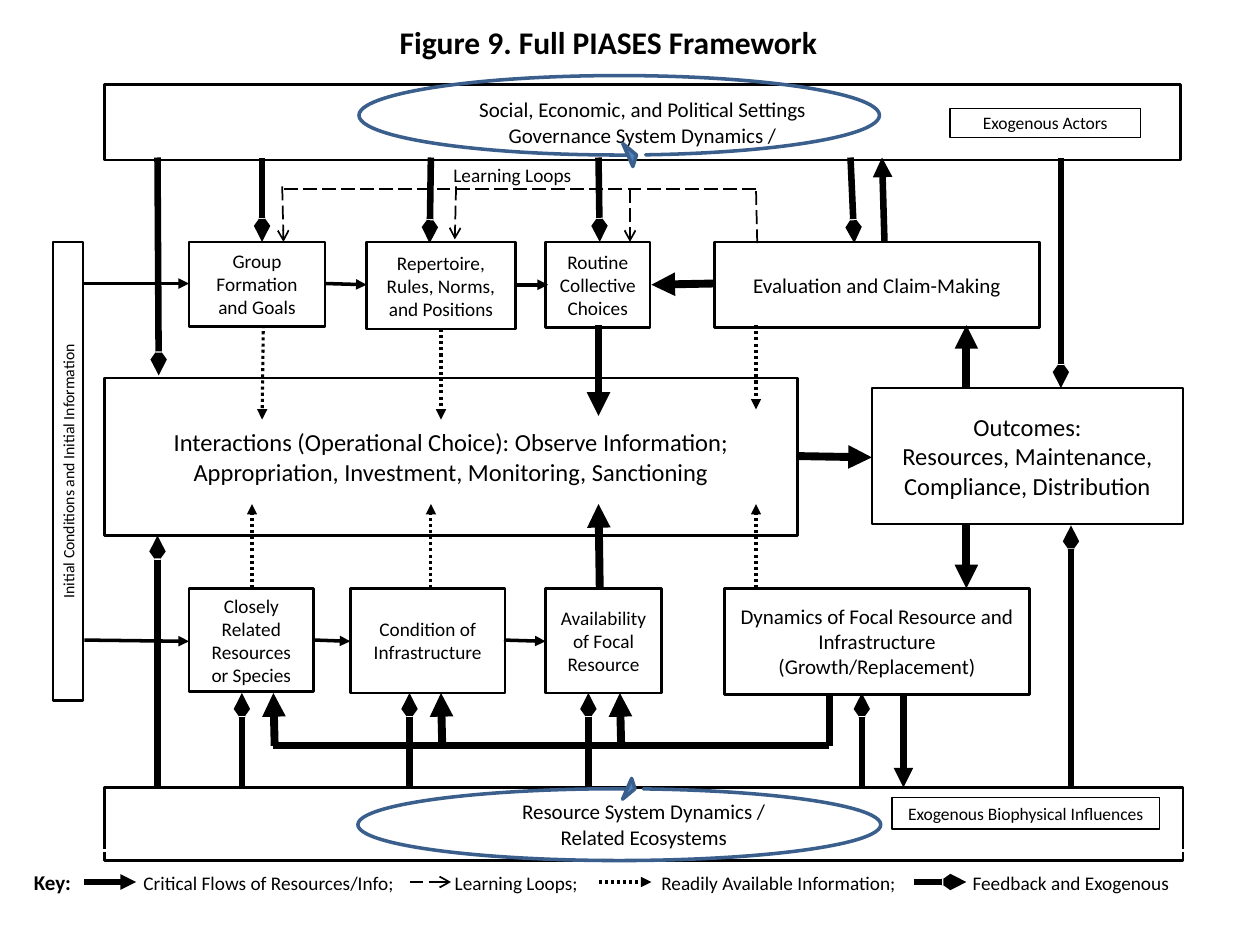
import dataclasses
import typing

import lxml.etree
import pptx
import pptx.dml.color
import pptx.enum.dml
import pptx.enum.shapes
import pptx.enum.text
import pptx.oxml.ns
import pptx.util

Inches = pptx.util.Inches
Pt = pptx.util.Pt
qn = pptx.oxml.ns.qn
ALIGN = pptx.enum.text.PP_ALIGN
DASH = pptx.enum.dml.MSO_LINE
SHAPE = pptx.enum.shapes.MSO_SHAPE


@dataclasses.dataclass(frozen=True)
class Theme:
    ink: str = "000000"
    paper: str = "FFFFFF"
    loop: str = "4F81BD"
    rim: str = "3A5F8C"
    font: str = "Calibri"
    title: float = 18
    large: float = 14
    text: float = 12
    small: float = 11
    tag: float = 10
    side: float = 9


THEME = Theme()


@dataclasses.dataclass(frozen=True)
class Box:
    text: str
    left: float
    top: float
    width: float
    height: float
    size: float = THEME.small
    edge: float = 1.5
    color: str = THEME.ink
    align: ALIGN = ALIGN.CENTER


@dataclasses.dataclass(frozen=True)
class Flow:
    """A kind of line: its weight, dash and arrowhead."""
    weight: float
    dash: typing.Optional[DASH] = None
    head: str = ""
    breadth: str = "med"


BOLD = Flow(4.5, head="triangle")
STEP = Flow(2, head="triangle")
REPLY = Flow(3.75, head="triangle")
OUTER = Flow(3.75, head="arrow", breadth="sm")
TRUNK = Flow(4)
LOOP = Flow(1, DASH.LONG_DASH)
LEARN = Flow(1, DASH.LONG_DASH, "arrow")
INFO = Flow(1.75, DASH.ROUND_DOT, "triangle")
KEY = Flow(3, head="triangle")

BOXES = [
    # Settings above and below
    Box("Social, Economic, and Political Settings\nGovernance System Dynamics /",
        0.83, 0.67, 8.54, 0.6, THEME.text),
    Box("Resource System Dynamics /\nRelated Ecosystems",
        0.83, 6.25, 8.56, 0.58, THEME.text),
    # Choice row
    Box("Evaluation and Claim-Making", 5.67, 1.92, 2.58, 0.68, THEME.text),
    Box("Routine Collective Choices", 4.33, 1.92, 0.83, 0.68),
    Box("Repertoire, Rules, Norms, and Positions", 2.91, 1.92, 1.18, 0.69),
    Box("Group Formation and Goals", 1.5, 1.92, 1.08, 0.67),
    # Resource row
    Box("Closely Related Resources or Species", 1.5, 4.67, 0.99, 0.82),
    Box("Condition of Infrastructure", 2.78, 4.67, 1.23, 0.83),
    Box("Availability of Focal Resource", 4.33, 4.67, 0.92, 0.83),
    Box("Dynamics of Focal Resource and Infrastructure (Growth/Replacement)",
        5.75, 4.67, 2.42, 0.84, THEME.text),
    # Centre
    Box("Outcomes:\nResources, Maintenance, Compliance, Distribution",
        6.92, 3.08, 2.47, 1.08, THEME.large),
    Box("Interactions (Operational Choice): Observe Information;\n"
        "Appropriation, Investment, Monitoring, Sanctioning",
        0.83, 3, 5.5, 1.25, THEME.large),
    # Outside influences
    Box("Exogenous Actors", 7.54, 0.86, 1.51, 0.23, THEME.tag, 0),
    Box("Exogenous Biophysical Influences", 7.08, 6.33, 2.12, 0.25, THEME.tag, 0),
]
SIDE = Box("Initial Conditions and Initial Information",
           0.42, 1.92, 0.24, 3.64, THEME.side)
LEGEND = Box("", 0.17, 6.75, 9.25, 0.5, color=THEME.paper, align=ALIGN.LEFT)
LABELS = {1.14: "Critical Flows of Resources/Info;", 3.61: "Learning Loops;",
          5.25: "Readily Available Information;", 7.72: "Feedback and Exogenous"}

# Each line runs from x, y to x, y
LINES = {
    BOLD: [(6.33, 3.62, 6.92, 3.63), (7.67, 3.08, 7.67, 2.58),
           (7.67, 4.17, 7.67, 4.67), (5.67, 2.25, 5.17, 2.26),
           (4.75, 2.58, 4.75, 3.3), (4.76, 4.67, 4.75, 4)]
          + [(x + 0.01, 5.92, x, 5.5) for x in (2.17, 3.5, 4.92)],
    STEP: [(2.58, 2.25, 2.91, 2.26), (4.08, 2.26, 4.35, 2.26),
           (4, 5.08, 4.33, 5.09), (2.5, 5.08, 2.78, 5.09),
           (0.67, 2.25, 1.5, 2.25), (0.67, 5.08, 1.5, 5.09)],
    LOOP: [(6.01, 1.93, 6, 1.5), (6, 1.5, 2.25, 1.5)],
    LEARN: [(2.24, 1.48, 2.25, 1.92), (3.62, 1.48, 3.61, 1.9),
            (5, 1.5, 5, 1.92), (3.25, 7, 3.58, 7)],
    OUTER: [(x, 1.25, end, y) for x, end, y in
            ((1.25, 1.26, 2.98), (2.08, 2.08, 1.92), (3.42, 3.41, 1.93),
             (4.75, 4.76, 1.92), (6.75, 6.78, 1.93), (8.42, 8.42, 3.08))]
           + [(x, 6.25, x, y) for x, y in
              ((1.92, 5.5), (3.25, 5.5), (4.67, 5.5), (6.84, 5.5),
               (1.25, 4.25), (8.5, 4.17))]
           + [(7.25, 7, 7.67, 7)],
    REPLY: [(7.02, 1.92, 7, 1.25), (7.17, 5.5, 7.17, 6.25)],
    TRUNK: [(6.58, 5.92, 2.17, 5.92), (6.58, 5.92, 6.58, 5.5)],
    INFO: [(x, 4.67, x, 4) for x in (2, 3.42, 6)]
          + [(2.09, 2.58, 2.08, 3.33), (3.5, 2.61, 3.5, 3.33),
             (6, 2.58, 6, 3.25), (4.75, 7, 5.17, 7)],
    KEY: [(0.67, 7, 1.08, 7)],
}


def tint(code: str) -> pptx.dml.color.RGBColor:
    return pptx.dml.color.RGBColor.from_string(code)


def style(para, size: float, align: ALIGN, bold: bool = False) -> None:
    para.alignment = align
    font = para.font
    font.name, font.size, font.bold = THEME.font, Pt(size), bold
    font.color.rgb = tint(THEME.ink)


def draw_box(slide, box: Box):
    shape = slide.shapes.add_shape(
        SHAPE.RECTANGLE, *map(Inches, (box.left, box.top, box.width, box.height)))
    shape.shadow.inherit = False
    shape.fill.background()
    shape.line.color.rgb = tint(box.color)
    shape.line.width = Pt(box.edge)
    frame = shape.text_frame
    frame.word_wrap = True
    frame.vertical_anchor = pptx.enum.text.MSO_ANCHOR.MIDDLE
    frame.text = box.text
    for para in frame.paragraphs:
        style(para, box.size, box.align)
    return shape


def draw_line(slide, flow: Flow, ends: typing.Tuple[float, ...]) -> None:
    link = slide.shapes.add_connector(
        pptx.enum.shapes.MSO_CONNECTOR.STRAIGHT, *map(Inches, ends))
    link.line.color.rgb = tint(THEME.ink)
    link.line.width = Pt(flow.weight)
    if flow.dash:
        link.line.dash_style = flow.dash
    props = link._element.spPr
    if flow.head:
        lxml.etree.SubElement(props.find(qn("a:ln")), qn("a:tailEnd"),
                              type=flow.head, w=flow.breadth, len="med")
    lxml.etree.SubElement(props, qn("a:effectLst"))


def draw_loop(slide, left: float, top: float, width: float, flip: bool) -> None:
    shape = slide.shapes.add_shape(
        SHAPE.CIRCULAR_ARROW, *map(Inches, (left, top, width, 4.33)))
    shape.rotation = 90
    if flip:
        shape._element.spPr.xfrm.set("flipH", "1")
    # Angles are stored in 60000ths of a degree, shares in 100000ths
    angles = [deg * 0.6 for deg in (11.42, 192.22, 213.75)]
    for i, value in enumerate([0, *angles, 0.12]):
        shape.adjustments[i] = value
    shape.shadow.inherit = False
    shape.fill.solid()
    shape.fill.fore_color.rgb = tint(THEME.loop)
    shape.line.color.rgb = tint(THEME.rim)
    shape.line.width = Pt(2)


def draw_key(slide) -> None:
    para = draw_box(slide, LEGEND).text_frame.paragraphs[0]
    stops = lxml.etree.SubElement(para._p.get_or_add_pPr(), qn("a:tabLst"))
    props = para._p.pPr
    props.insert(0, stops)
    word = para.add_run()
    word.text = "Key:"
    word.font.bold, word.font.size = True, Pt(THEME.text)
    for left, label in LABELS.items():
        lxml.etree.SubElement(stops, qn("a:tab"), algn="l",
                              pos=str(Inches(left - LEGEND.left - 0.1)))
        para.add_run().text = "\t" + label


def main() -> None:
    deck = pptx.Presentation()
    deck.slide_width, deck.slide_height = Inches(10), Inches(7.5)
    slide = deck.slides.add_slide(deck.slide_layouts[5])

    # Title
    title = slide.shapes.title
    title.left, title.top, title.width, title.height = map(
        Inches, (0.33, 0.17, 9, 0.33))
    title.text_frame.text = "Figure 9. Full PIASES Framework"
    title.text_frame.vertical_anchor = pptx.enum.text.MSO_ANCHOR.MIDDLE
    style(title.text_frame.paragraphs[0], THEME.title, ALIGN.CENTER, True)

    # Boxes, with the upright one at the side
    for box in BOXES:
        draw_box(slide, box)
    side = draw_box(slide, SIDE).text_frame
    side._txBody.bodyPr.set("vert", "vert270")

    # Key and loop label
    draw_key(slide)
    note = slide.shapes.add_textbox(*map(Inches, (3.5, 1.25, 1.25, 0.29)))
    note.text_frame.word_wrap = True
    note.text_frame.text = "Learning Loops"
    style(note.text_frame.paragraphs[0], THEME.small, ALIGN.LEFT)

    # Flows
    for flow, group in LINES.items():
        for ends in group:
            draw_line(slide, flow, ends)

    # Turning loops
    draw_loop(slide, 4.5, -1.25, 0.83, True)
    draw_loop(slide, 4.54, 4.38, 0.75, False)
    deck.save("out.pptx")


if __name__ == "__main__":
    main()
